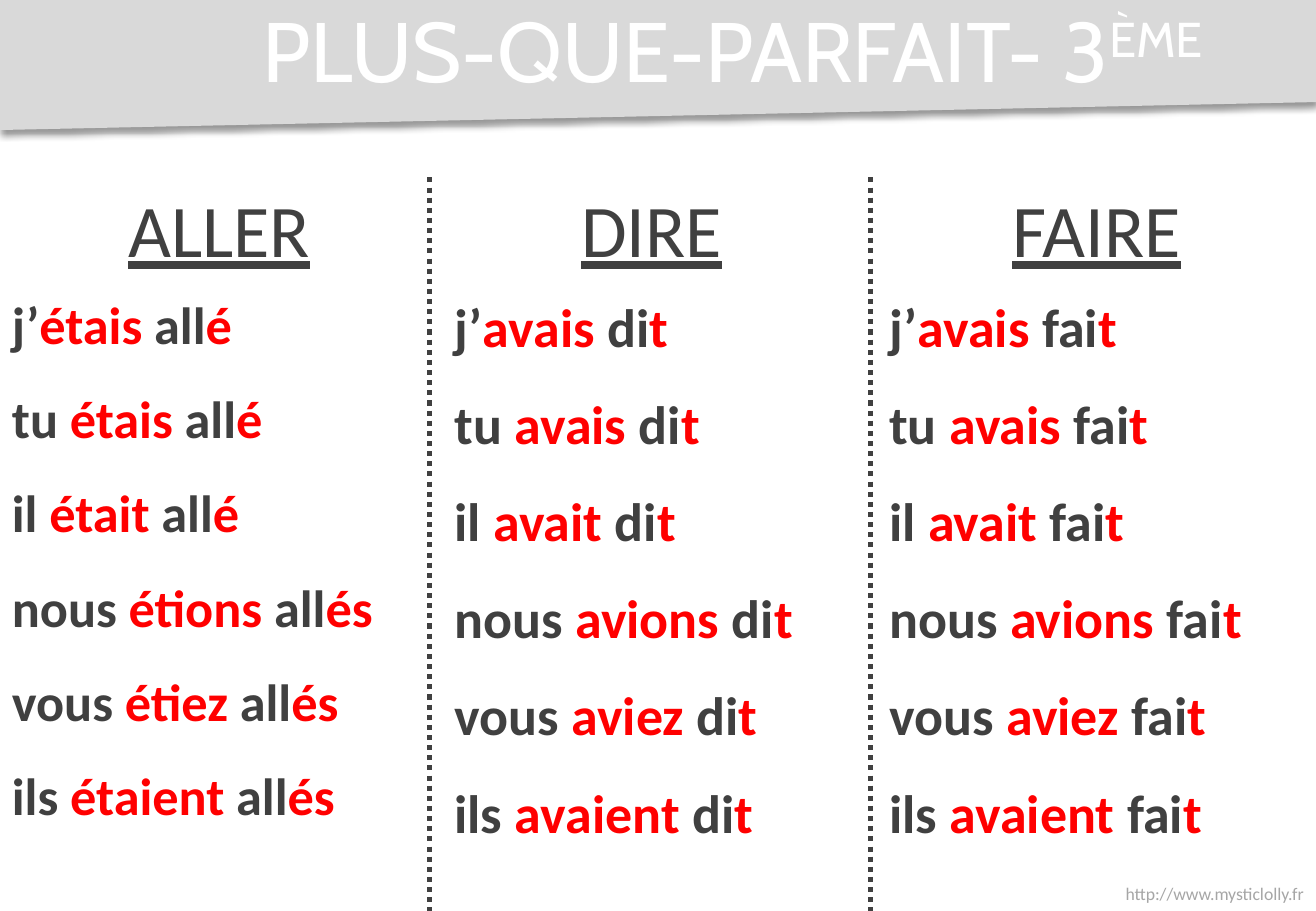
from lxml.etree import SubElement
from pptx import Presentation
from pptx.dml.color import RGBColor
from pptx.enum.dml import MSO_LINE
from pptx.enum.shapes import MSO_CONNECTOR
from pptx.enum.text import MSO_ANCHOR, MSO_AUTO_SIZE, PP_ALIGN
from pptx.oxml.ns import qn
from pptx.util import Cm, Pt

SLIDE_W, SLIDE_H = 27.51, 19.05
COLUMN_W = SLIDE_W / 3
COLUMN_TOP = 3.71
INK, ACCENT = "404040", "FF0000"

PRONOUNS = ["j’", "tu ", "il ", "nous ", "vous ", "ils "]
ETRE = ["étais", "étais", "était", "étions", "étiez", "étaient"]
AVOIR = ["avais", "avais", "avait", "avions", "aviez", "avaient"]

# Heading left, forms left, forms size, verb, auxiliary, stem, endings
VERBS = [
    (0, 0, 31, "ALLER", ETRE, "all", ["é"] * 3 + ["és"] * 3),
    (9.04, 9.25, 32, "DIRE", AVOIR, "di", ["t"] * 6),
    (18.34, 18.34, 32, "FAIRE", AVOIR, "fai", ["t"] * 6),
]
DIVIDERS = [8.97, 18.19]


def color(hex_value):
    return RGBColor.from_string(hex_value)


def add_run(paragraph, text, hex_value, **formats):
    run = paragraph.add_run()
    run.text = text
    run.font.color.rgb = color(hex_value)
    for name, value in formats.items():
        setattr(run.font, name, value)
    return run


def add_frame(slide, box, **formats):
    frame = slide.shapes.add_textbox(*map(Cm, box)).text_frame
    settings = {"word_wrap": True, "auto_size": MSO_AUTO_SIZE.SHAPE_TO_FIT_TEXT}
    for name, value in (settings | formats).items():
        setattr(frame, name, value)
    return frame


def add_banner(slide, left, top, width, height):
    # Slanted band
    right = left + width
    outline = slide.shapes.build_freeform(Cm(left), Cm(top))
    corners = [(right, top), (right, top + 0.785 * height), (left, top + height)]
    outline.add_line_segments([(Cm(x), Cm(y)) for x, y in corners], close=True)
    band = outline.convert_to_shape()
    band.fill.solid()
    band.fill.fore_color.rgb = color("D9D9D9")
    band.line.fill.background()

    # Soft shadow under the band
    band.shadow.inherit = False
    effects = band._element.spPr.find(qn("a:effectLst"))
    shadow = SubElement(effects, qn("a:outerShdw"), blurRad=str(Pt(4)),
                        dist=str(Pt(3)), dir="5400000", algn="t", rotWithShape="0")
    black = SubElement(shadow, qn("a:srgbClr"), val="000000")
    SubElement(black, qn("a:alpha"), val="40000")

    # Title with raised ordinal
    frame = add_frame(slide, (left + 3.35, top - 0.05, width - 3.35, 2.16),
                      auto_size=MSO_AUTO_SIZE.NONE,
                      vertical_anchor=MSO_ANCHOR.MIDDLE)
    title = frame.paragraphs[0]
    title.alignment = PP_ALIGN.CENTER
    style = {"name": "Cabin", "size": Pt(50)}
    add_run(title, "PLUS-QUE-PARFAIT- 3", "FFFFFF", **style)
    ordinal = add_run(title, "ÈME ", "FFFFFF", **style)
    ordinal._r.get_or_add_rPr().set("baseline", "30000")


def add_verb(slide, top, heading_left, forms_left, size, verb, auxiliary, stem, endings):
    # Infinitive
    heading = add_frame(slide, (heading_left, top, COLUMN_W, 2.13)).paragraphs[0]
    heading.alignment = PP_ALIGN.CENTER
    add_run(heading, verb, INK, name="Calibri", size=Pt(44), underline=True)

    # Conjugated forms
    forms = add_frame(slide, (forms_left, top + 1.62, COLUMN_W, 0.393 * size))
    for index, (pronoun, helper, ending) in enumerate(zip(PRONOUNS, auxiliary, endings)):
        line = forms.add_paragraph() if index else forms.paragraphs[0]
        line.line_spacing = 1.5
        parts = [(pronoun, INK), (helper, ACCENT), (f" {stem}", INK), (ending, ACCENT)]
        for text, hex_value in parts:
            add_run(line, text, hex_value, name="Calibri", size=Pt(size), bold=True)


def add_divider(slide, left, top, bottom):
    divider = slide.shapes.add_connector(
        MSO_CONNECTOR.STRAIGHT, Cm(left), Cm(top), Cm(left), Cm(bottom))
    divider.line.color.rgb = color(INK)
    divider.line.width = Pt(3)
    divider.line.dash_style = MSO_LINE.ROUND_DOT
    SubElement(divider._element.spPr, qn("a:effectLst"))


def add_footer(slide, left, top, width, height):
    address = add_frame(slide, (left, top, width, height)).paragraphs[0]
    address.alignment = PP_ALIGN.RIGHT
    add_run(address, "http://www.mysticlolly.fr", "A6A6A6", name="Calibri", size=Pt(10.5))


def main():
    deck = Presentation()
    deck.slide_width, deck.slide_height = Cm(SLIDE_W), Cm(SLIDE_H)
    slide = deck.slides.add_slide(deck.slide_layouts[6])
    add_banner(slide, 0, 0, SLIDE_W, 2.72)
    add_footer(slide, SLIDE_W - 6.2, 18.34, 6.2, 0.71)
    for verb in VERBS:
        add_verb(slide, COLUMN_TOP, *verb)
    for left in DIVIDERS:
        add_divider(slide, left, COLUMN_TOP, SLIDE_H)
    deck.save("out.pptx")


if __name__ == "__main__":
    main()
